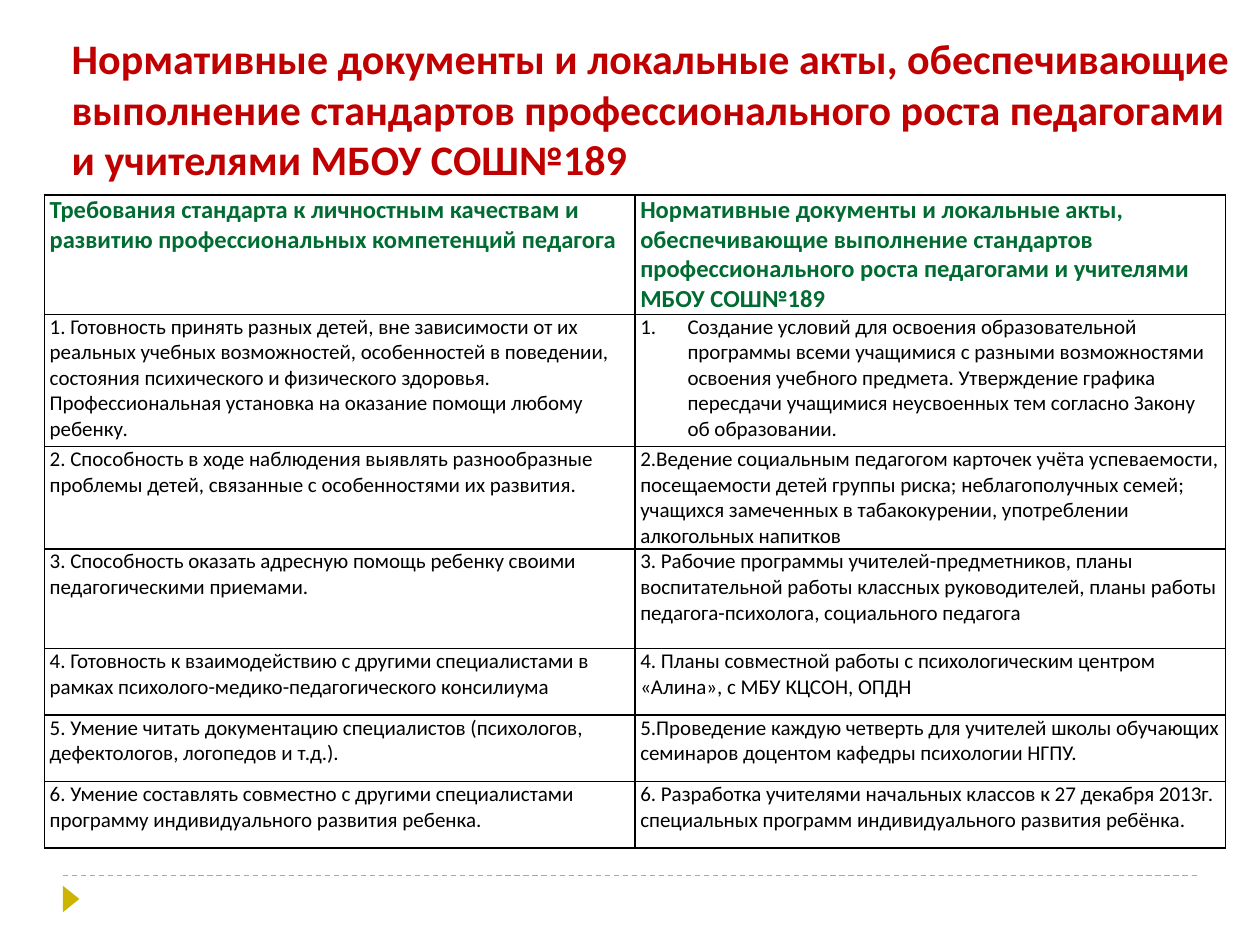
import pptx
import pptx.dml.color
import pptx.enum.dml
import pptx.enum.shapes
import pptx.enum.text
import pptx.oxml
import pptx.oxml.ns
import pptx.util
from lxml import etree

Pt = pptx.util.Pt

TITLE = ("Нормативные документы и локальные акты, обеспечивающие выполнение "
         "стандартов профессионального роста педагогами и учителями МБОУ СОШ№189")
HEADINGS = ("Требования стандарта к личностным качествам и развитию "
            "профессиональных компетенций педагога", TITLE)
REQUIREMENTS = [
    ("1. Готовность принять разных детей, вне зависимости от их реальных учебных "
     "возможностей, особенностей в поведении, состояния психического и физического "
     "здоровья. Профессиональная установка на оказание помощи любому ребенку.",
     "Создание условий для освоения образовательной программы всеми учащимися с "
     "разными возможностями освоения учебного предмета. Утверждение графика "
     "пересдачи учащимися неусвоенных тем согласно Закону об образовании."),
    ("2. Способность в ходе наблюдения выявлять разнообразные проблемы детей, "
     "связанные с особенностями их развития.",
     "2.Ведение социальным педагогом карточек учёта успеваемости, посещаемости "
     "детей группы риска; неблагополучных семей; учащихся замеченных в "
     "табакокурении, употреблении алкогольных напитков"),
    ("3. Способность оказать адресную помощь ребенку своими педагогическими приемами.",
     "3. Рабочие программы учителей-предметников, планы воспитательной работы "
     "классных руководителей, планы работы педагога-психолога, социального педагога"),
    ("4. Готовность к взаимодействию с другими специалистами в рамках "
     "психолого-медико-педагогического консилиума",
     "4. Планы совместной работы с психологическим центром «Алина», с МБУ КЦСОН, ОПДН"),
    ("5. Умение читать документацию специалистов (психологов, дефектологов, "
     "логопедов и т.д.).",
     "5.Проведение каждую четверть для учителей школы обучающих семинаров "
     "доцентом кафедры психологии НГПУ."),
    ("6. Умение составлять совместно с другими специалистами программу "
     "индивидуального развития ребенка.",
     "6. Разработка учителями начальных классов к 27 декабря 2013г. специальных "
     "программ индивидуального развития ребёнка."),
]
ROW_HEIGHTS = [57, 75.6, 57, 57, 38, 38, 38]


def color(code):
    return pptx.dml.color.RGBColor.from_string(code)


class SlideBuilder:
    font = "Calibri"
    title_color, heading_color, body_color = "C00000", "006C31", "000000"
    accent, border = "CCB400", "000000"

    def __init__(self, page):
        self.page = page

    def add_span(self, para, text, size, code, bold=False):
        span = para.add_run()
        span.text = text
        span.font.name = self.font
        span.font.size = Pt(size)
        span.font.bold = bold
        span.font.color.rgb = color(code)

    def title(self, text, left, top, width, height):
        box = self.page.shapes.title
        box.left, box.top, box.width, box.height = map(Pt, (left, top, width, height))
        frame = box.text_frame
        frame.word_wrap = True
        frame.auto_size = pptx.enum.text.MSO_AUTO_SIZE.NONE
        frame.vertical_anchor = pptx.enum.text.MSO_ANCHOR.TOP
        para = frame.paragraphs[0]
        para.alignment = pptx.enum.text.PP_ALIGN.LEFT
        self.add_span(para, text, 24, self.title_color, bold=True)

    def dashed_line(self, left, top, right):
        line = self.page.shapes.add_connector(
            pptx.enum.shapes.MSO_CONNECTOR.STRAIGHT, Pt(left), Pt(top), Pt(right), Pt(top))
        line.line.color.rgb = color(self.accent)
        line.line.width = Pt(0.75)
        line.line.dash_style = pptx.enum.dml.MSO_LINE.DASH
        etree.SubElement(line._element.spPr, pptx.oxml.ns.qn("a:effectLst"))

    def triangle(self, left, top, width, height):
        shape = self.page.shapes.add_shape(
            pptx.enum.shapes.MSO_SHAPE.ISOSCELES_TRIANGLE,
            Pt(left), Pt(top), Pt(width), Pt(height))
        shape.rotation = 90
        shape.shadow.inherit = False
        shape.fill.solid()
        shape.fill.fore_color.rgb = color(self.accent)
        shape.line.fill.background()

    def table(self, rows, left, top, width, heights):
        columns = len(rows[0])
        grid = self.page.shapes.add_table(
            len(rows), columns, Pt(left), Pt(top), Pt(width), Pt(sum(heights))).table
        grid.horz_banding = False
        for column in grid.columns:
            column.width = Pt(width / columns)
        for index, (texts, height) in enumerate(zip(rows, heights)):
            grid.rows[index].height = Pt(height)
            for number, text in enumerate(texts):
                self.cell(grid.cell(index, number), text, heading=index == 0)
        return grid

    def cell(self, cell, text, heading):
        cell.margin_left = cell.margin_right = Pt(3)
        cell.margin_top = cell.margin_bottom = 0
        self.outline(cell)
        cell.fill.background()
        size, code = (14, self.heading_color) if heading else (12, self.body_color)
        self.add_span(cell.text_frame.paragraphs[0], text, size, code, bold=heading)

    def outline(self, cell):
        """Draw a thin border on all four sides of the cell."""
        properties = cell._tc.get_or_add_tcPr()
        for side in ("lnL", "lnR", "lnT", "lnB"):
            line = etree.SubElement(properties, pptx.oxml.ns.qn(f"a:{side}"), w=str(Pt(1)))
            fill = etree.SubElement(line, pptx.oxml.ns.qn("a:solidFill"))
            etree.SubElement(fill, pptx.oxml.ns.qn("a:srgbClr"), val=self.border)

    def number(self, para, indent):
        """Turn the paragraph into an automatically numbered item."""
        properties = para._p.get_or_add_pPr()
        properties.set("marL", str(Pt(indent)))
        properties.set("indent", str(-Pt(indent)))
        etree.SubElement(properties, pptx.oxml.ns.qn("a:buAutoNum"), type="arabicPeriod")


def main():
    deck = pptx.Presentation()
    deck.slide_width, deck.slide_height = Pt(720), Pt(540)
    builder = SlideBuilder(deck.slides.add_slide(deck.slide_layouts[5]))
    builder.dashed_line(36, 500.4, 684)
    builder.triangle(33.1, 509, 15.1, 9.4)
    builder.title(TITLE, 33.8, 15.1, 686.2, 94.3)
    grid = builder.table([HEADINGS, *REQUIREMENTS], 25.4, 111.4, 675, ROW_HEIGHTS)
    builder.number(grid.cell(1, 1).text_frame.paragraphs[0], 27)
    deck.save("out.pptx")


if __name__ == "__main__":
    main()
